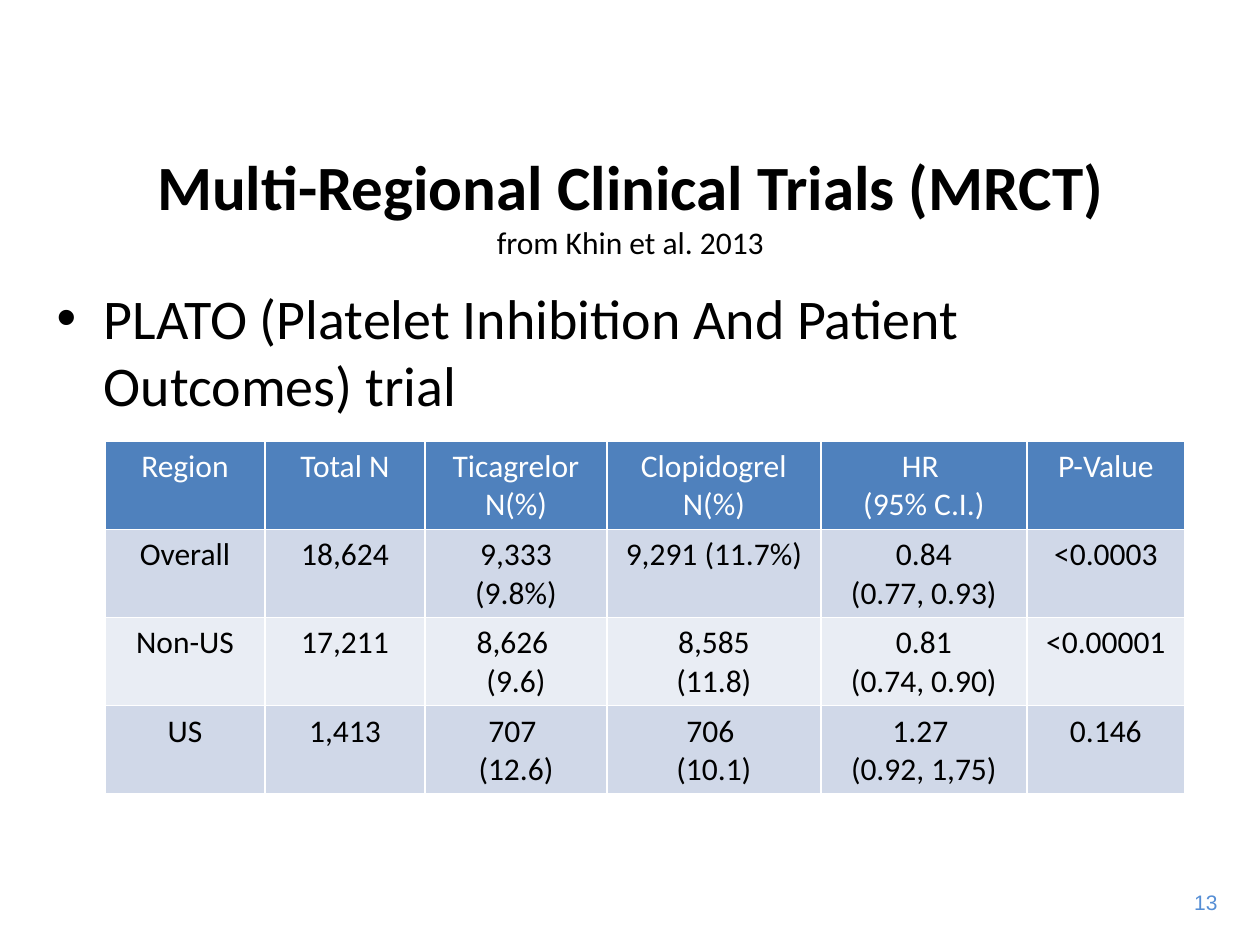
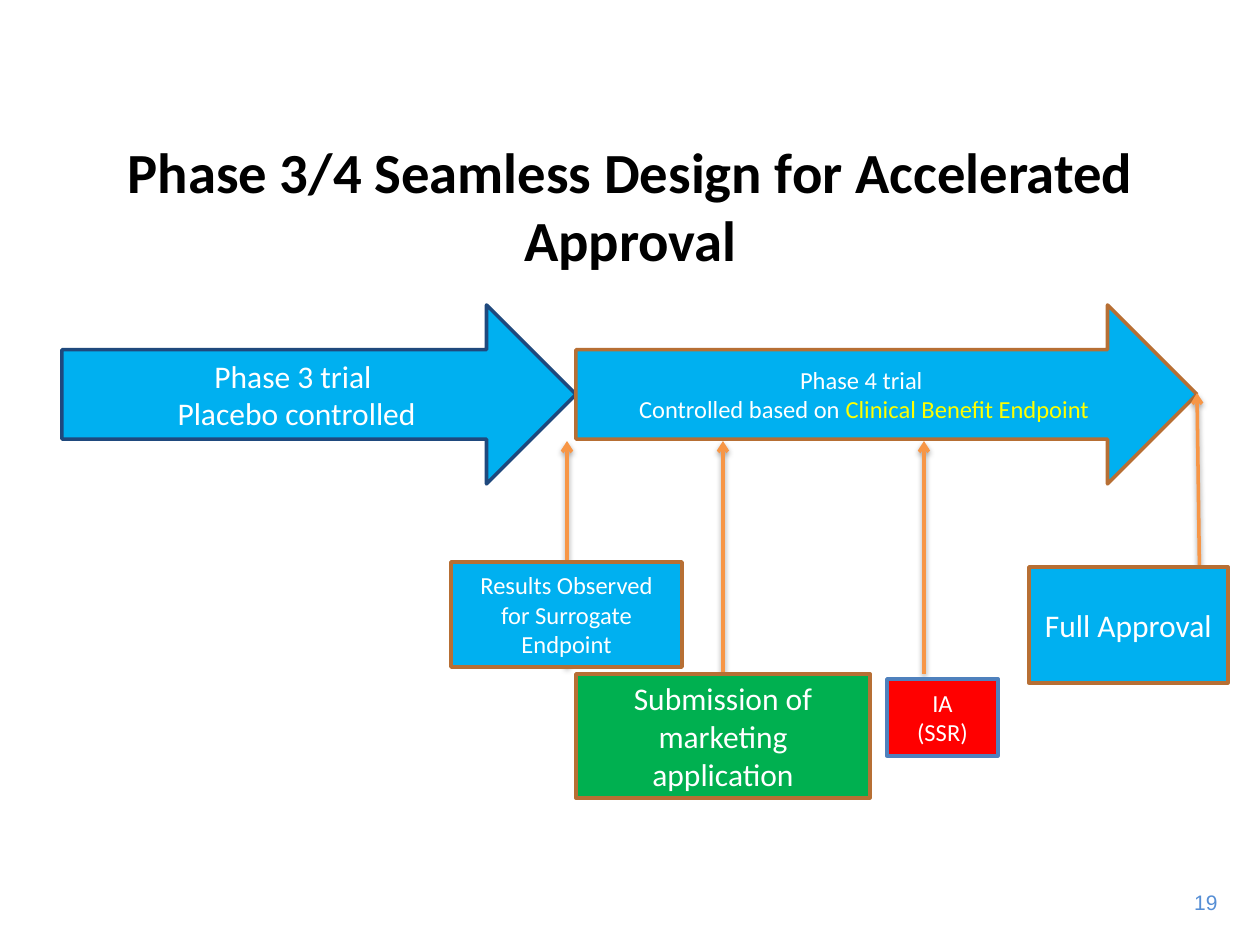
from lxml import etree
from pptx import Presentation
from pptx.dml.color import RGBColor
from pptx.enum.shapes import MSO_CONNECTOR, MSO_SHAPE
from pptx.enum.text import MSO_ANCHOR, MSO_AUTO_SIZE, PP_ALIGN
from pptx.oxml import parse_xml
from pptx.oxml.ns import nsdecls, qn
from pptx.util import Inches, Pt

BLACK = RGBColor(0x00, 0x00, 0x00)
WHITE = RGBColor(0xFF, 0xFF, 0xFF)
YELLOW = RGBColor(0xFF, 0xFF, 0x00)
SKY = RGBColor(0x00, 0xB0, 0xF0)
GREEN = RGBColor(0x00, 0xB0, 0x50)
RED = RGBColor(0xFF, 0x00, 0x00)
NAVY = RGBColor(0x1F, 0x49, 0x7D)
BROWN = RGBColor(0xB7, 0x6F, 0x34)
ORANGE = RGBColor(0xF7, 0x96, 0x46)
BLUE = RGBColor(0x4F, 0x81, 0xBD)
PAGE_BLUE = RGBColor(0x55, 0x8E, 0xD5)
BAND_DARK = RGBColor(0xD0, 0xD8, 0xE8)
BAND_LIGHT = RGBColor(0xE9, 0xED, 0xF4)

LEFT, CENTER, RIGHT = PP_ALIGN.LEFT, PP_ALIGN.CENTER, PP_ALIGN.RIGHT
MIDDLE, TOP = MSO_ANCHOR.MIDDLE, MSO_ANCHOR.TOP
NO_FIT = MSO_AUTO_SIZE.NONE
RECTANGLE, RIGHT_ARROW = MSO_SHAPE.RECTANGLE, MSO_SHAPE.RIGHT_ARROW
STRAIGHT = MSO_CONNECTOR.STRAIGHT

PX = Inches(10) / 1260
TITLE_ONLY, TITLE_AND_BODY = 5, 1
TITLE_BOX = (44, 141, 1173, 127)
BODY_BOX = (44, 277, 1173, 591)
PAGE_BOX = (1178, 883, 52, 38)

REGIONS_TITLE = [[("Multi-Regional Clinical Trials (MRCT)", {}), ("\n", {}),
                  ("from Khin et al. 2013", {"size": Pt(18), "bold": False})]]
REGIONS_BULLET = "PLATO (Platelet Inhibition And Patient Outcomes) trial"
TABLE_ORIGIN = (105, 441)
COLUMN_WIDTHS = (160, 160, 182, 214, 206, 158)
ROW_HEIGHT = 88
TRIAL_ROWS = [
    ("Region", "Total N", "Ticagrelor\nN(%)", "Clopidogrel\nN(%)", "HR \n(95% C.I.)", "P-Value"),
    ("Overall", "18,624", "9,333 (9.8%)", "9,291 (11.7%)", "0.84\n(0.77, 0.93)", "<0.0003"),
    ("Non-US", "17,211", "8,626 \n(9.6)", "8,585\n(11.8)", "0.81\n(0.74, 0.90)", "<0.00001"),
    ("US", "1,413", "707 \n(12.6)", "706 \n(10.1)", "1.27 \n(0.92, 1,75)", "0.146"),
]

DESIGN_TITLE = "Phase 3/4 Seamless Design for Accelerated Approval"
PHASE_4_TEXT = [[("Phase 4 trial ", {})],
                [("Controlled based on ", {}), ("Clinical Benefit Endpoint", {"color": YELLOW})]]
PHASES = [
    ("Phase 3 trial \nPlacebo controlled", (62, 305, 514, 179), SKY, NAVY, 18),
    (PHASE_4_TEXT, (576, 305, 621, 179), SKY, BROWN, 14),
]
MILESTONES = [
    ("Results Observed for Surrogate Endpoint", (451, 562, 231, 105), SKY, BROWN, 14),
    ("Submission of marketing application", (576, 674, 294, 124), GREEN, BROWN, 18),
    ("Full Approval", (1029, 567, 199, 116), SKY, BROWN, 18),
    ("IA\n(SSR)", (887, 679, 111, 77), RED, BLUE, 14),
]
MILESTONE_ARROWS = [
    (567, 667, 567, 441),
    (723, 674, 723, 441),
    (1200, 607, 1197, 393),
    (924, 674, 924, 441),
]


def px(values):
    return [round(value * PX) for value in values]


def place(shape, box):
    for name, value in zip(("left", "top", "width", "height"), px(box)):
        setattr(shape, name, value)


def set_font(font, values):
    for name, value in values.items():
        if name == "color":
            font.color.rgb = value
        else:
            setattr(font, name, value)


def write(frame, content, size, color=BLACK, align=CENTER, name="Calibri", bold=False):
    if isinstance(content, str):
        content = [[(line, {})] for line in content.split("\n")]
    base = {"size": Pt(size), "color": color, "name": name, "bold": bold}
    for index, runs in enumerate(content):
        paragraph = frame.add_paragraph() if index else frame.paragraphs[0]
        paragraph.alignment = align
        paragraph.space_before = Pt(0)
        for text, changes in runs:
            if text == "\n":
                paragraph.add_line_break()
                continue
            run = paragraph.add_run()
            run.text = text
            set_font(run.font, {**base, **changes})


def fill_placeholder(shape, box, content, size, anchor, **text_format):
    place(shape, box)
    for name, value in {"auto_size": NO_FIT, "vertical_anchor": anchor}.items():
        setattr(shape.text_frame, name, value)
    write(shape.text_frame, content, size, **text_format)


def add_slide(presentation, layout, title, title_size, page_number):
    slide = presentation.slides.add_slide(presentation.slide_layouts[layout])
    fill_placeholder(slide.shapes.title, TITLE_BOX, title, title_size, MIDDLE, bold=True)
    page = slide.shapes.add_textbox(*px(PAGE_BOX))
    page.text_frame.word_wrap = False
    write(page.text_frame, page_number, 12, PAGE_BLUE, RIGHT, "Arial")
    return slide


def add_trial_table(slide):
    size = (sum(COLUMN_WIDTHS), ROW_HEIGHT * len(TRIAL_ROWS))
    table = slide.shapes.add_table(len(TRIAL_ROWS), len(COLUMN_WIDTHS),
                                   *px(TABLE_ORIGIN + size)).table
    for column, width in zip(table.columns, px(COLUMN_WIDTHS)):
        column.width = width
    for row_index, row in enumerate(TRIAL_ROWS):
        band = BAND_DARK if row_index % 2 else BAND_LIGHT
        fill, color = (band, BLACK) if row_index else (BLUE, WHITE)
        for column_index, text in enumerate(row):
            cell = table.cell(row_index, column_index)
            cell.fill.solid()
            cell.fill.fore_color.rgb = fill
            write(cell.text_frame, text, 18, color)


def add_block(slide, kind, text, box, fill, outline, size):
    shape = slide.shapes.add_shape(kind, *px(box))
    shape.shadow.inherit = False
    shape.fill.solid()
    shape.fill.fore_color.rgb = fill
    shape.line.color.rgb = outline
    shape.line.width = Pt(2)
    shape.text_frame.vertical_anchor = MIDDLE
    write(shape.text_frame, text, size, WHITE)


def add_milestone_arrow(slide, ends):
    connector = slide.shapes.add_connector(STRAIGHT, *px(ends))
    connector.line.color.rgb = ORANGE
    connector.line.width = Pt(2)
    properties = connector._element.spPr
    etree.SubElement(properties.find(qn("a:ln")), qn("a:tailEnd"), type="arrow")
    properties.append(parse_xml(
        f'<a:effectLst {nsdecls("a")}>'
        '<a:outerShdw blurRad="40000" dist="20000" dir="5400000" rotWithShape="0">'
        '<a:srgbClr val="000000"><a:alpha val="38000"/></a:srgbClr>'
        '</a:outerShdw></a:effectLst>'))


def main():
    presentation = Presentation()
    presentation.slide_width = Inches(10)
    presentation.slide_height = Inches(7.5)

    regions = add_slide(presentation, TITLE_AND_BODY, REGIONS_TITLE, 36, "13")
    fill_placeholder(regions.placeholders[1], BODY_BOX, REGIONS_BULLET, 32, TOP, align=LEFT)
    add_trial_table(regions)

    design = add_slide(presentation, TITLE_ONLY, DESIGN_TITLE, 32.4, "19")
    for phase in PHASES:
        add_block(design, RIGHT_ARROW, *phase)
    for ends in MILESTONE_ARROWS:
        add_milestone_arrow(design, ends)
    for milestone in MILESTONES:
        add_block(design, RECTANGLE, *milestone)

    presentation.save("out.pptx")


if __name__ == "__main__":
    main()
